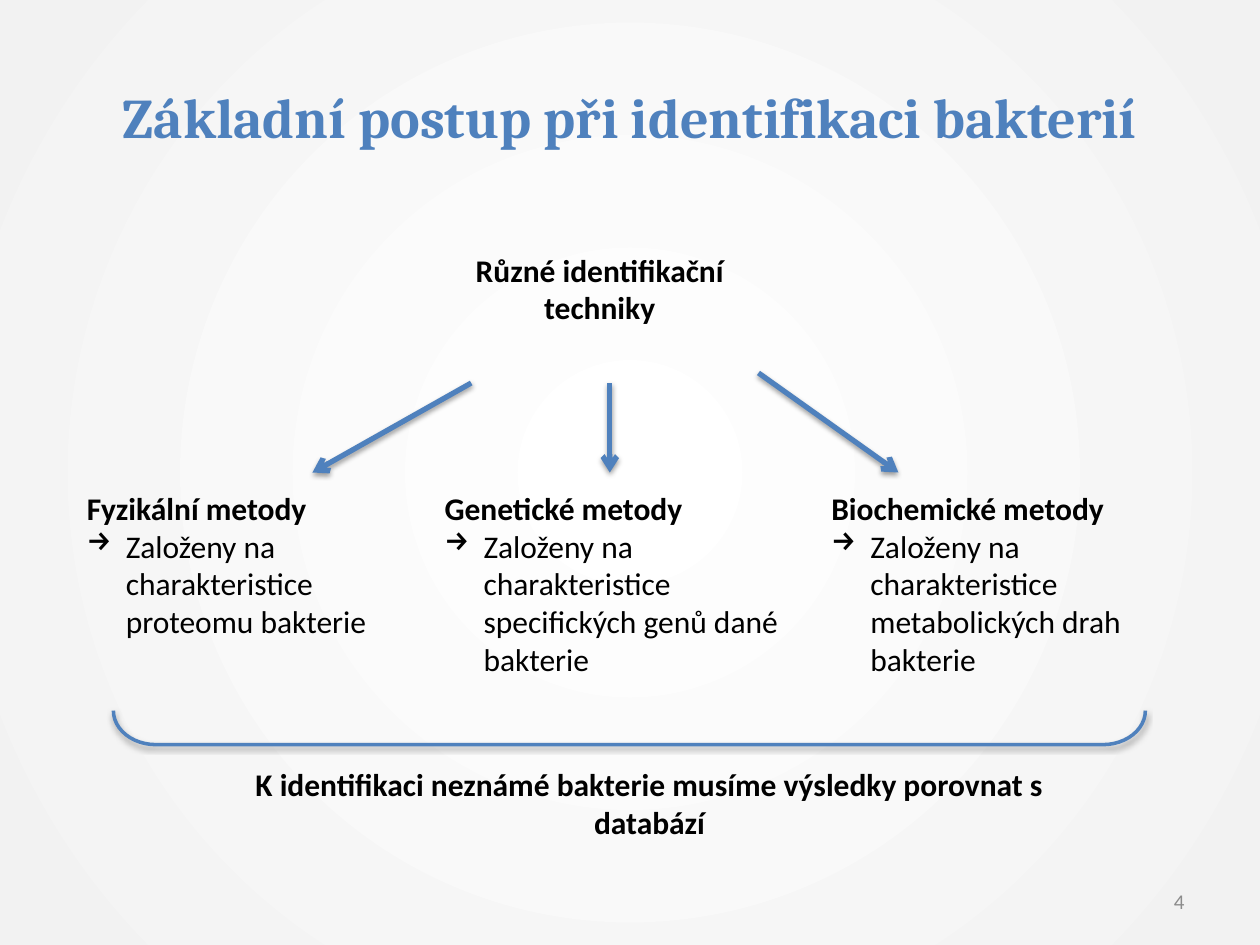
from lxml import etree
from pptx import Presentation
from pptx import util as u
from pptx.dml.color import RGBColor
from pptx.enum import shapes, text
from pptx.oxml.ns import qn

BLUE, BLACK, GREY = "4F81BD", "000000", "8C8C8C"
LEFT, CENTER, RIGHT = text.PP_ALIGN.LEFT, text.PP_ALIGN.CENTER, text.PP_ALIGN.RIGHT


def rgb(value):
    return RGBColor.from_string(value)


def add_xml(parent, tag, **attributes):
    child = etree.SubElement(parent, qn(tag))
    for key, value in attributes.items():
        child.set(key, str(value))
    return child


class SlideBuilder:
    body_font, heading_font = "Calibri", "Cambria"
    body_size = 18
    indent = u.Inches(0.31)

    def __init__(self, slide):
        self.slide = slide

    def radial_background(self, inner, outer):
        fill = self.slide.background.fill
        fill.gradient()
        for stop, color, position in zip(fill.gradient_stops, (inner, outer), (0, 1)):
            stop.color.rgb = rgb(color)
            stop.position = position
        gradient = self.slide.element.find(".//" + qn("a:gradFill"))
        gradient.remove(gradient.find(qn("a:lin")))
        circle = add_xml(gradient, "a:path", path="circle")
        add_xml(circle, "a:fillToRect", l=50000, t=50000, r=50000, b=50000)

    def style(self, paragraph, size=None, bold=False, color=BLACK, font=None, align=LEFT):
        paragraph.alignment = align
        for run in paragraph.runs:
            run.font.name = font or self.body_font
            run.font.size = u.Pt(size or self.body_size)
            run.font.bold = bold
            run.font.color.rgb = rgb(color)

    def text_box(self, box, wording, anchor=text.MSO_ANCHOR.TOP, **look):
        frame = self.slide.shapes.add_textbox(*map(u.Inches, box)).text_frame
        frame.word_wrap = True
        frame.vertical_anchor = anchor
        frame.text = wording
        self.style(frame.paragraphs[0], **look)
        return frame

    def method_block(self, box, heading, description):
        """Bold heading followed by one arrow-bulleted paragraph."""
        frame = self.text_box(box, heading, bold=True)
        bullet = frame.add_paragraph()
        bullet.text = description
        properties = bullet._p.get_or_add_pPr()
        properties.set("marL", str(self.indent))
        properties.set("indent", str(-self.indent))
        add_xml(properties, "a:buChar", char="→")
        self.style(bullet)

    def outline(self, shape, width):
        """Blue line with a soft shadow below it."""
        shape.line.color.rgb = rgb(BLUE)
        shape.line.width = u.Pt(width)
        effects = add_xml(shape._element.spPr, "a:effectLst")
        shadow = add_xml(effects, "a:outerShdw", blurRad=u.Pt(3.1), dist=u.Pt(1.6),
                         dir=90 * 60000, rotWithShape=0)
        add_xml(add_xml(shadow, "a:srgbClr", val=BLACK), "a:alpha", val=38000)

    def arrow(self, start, end):
        connector = self.slide.shapes.add_connector(
            shapes.MSO_CONNECTOR.STRAIGHT, *map(u.Inches, start + end))
        self.outline(connector, 3)
        add_xml(connector.line._get_or_add_ln(), "a:tailEnd", type="arrow")

    def bracket(self, box, curve):
        """Left bracket turned so that it opens upwards."""
        bracket = self.slide.shapes.add_shape(
            shapes.MSO_SHAPE.LEFT_BRACKET, *map(u.Inches, box))
        bracket.rotation = 270
        bracket.adjustments[0] = curve
        bracket.fill.background()
        self.outline(bracket, 2)


def main():
    presentation = Presentation()
    presentation.slide_width, presentation.slide_height = u.Inches(10), u.Inches(7.5)
    builder = SlideBuilder(presentation.slides.add_slide(presentation.slide_layouts[6]))
    middle = text.MSO_ANCHOR.MIDDLE

    builder.radial_background("FFFFFF", "F2F2F2")
    builder.text_box((0.5, 0.3, 9, 1.25), "Základní postup při identifikaci bakterií", middle,
                     size=32, bold=True, color=BLUE, font=builder.heading_font, align=CENTER)
    builder.text_box((3.5, 1.94, 2.52, 0.71), "Různé identifikační techniky",
                     bold=True, align=CENTER)

    methods = [
        (0.59, 2.91, "Fyzikální metody", "proteomu bakterie", (3.74, 3.04), 2.48),
        (3.43, 3.07, "Genetické metody", "specifických genů dané bakterie", (4.84, 3.04), 4.84),
        (6.5, 3.23, "Biochemické metody", "metabolických drah bakterie", (6.02, 2.96), 7.13),
    ]
    for left, width, heading, basis, arrow_start, arrow_end in methods:
        builder.arrow(arrow_start, (arrow_end, 3.75))
        builder.method_block((left, 3.83, width, 1.92), heading,
                             f"Založeny na charakteristice {basis}")

    builder.bracket((4.86, 1.68, 0.27, 8.19), 1.25)
    builder.text_box((1.85, 6.02, 6.61, 0.71),
                     "K identifikaci neznámé bakterie musíme výsledky porovnat s databází",
                     bold=True, align=CENTER)
    builder.text_box((7.17, 6.95, 2.33, 0.4), "4", middle, size=12, color=GREY, align=RIGHT)
    presentation.save("out.pptx")


if __name__ == "__main__":
    main()
